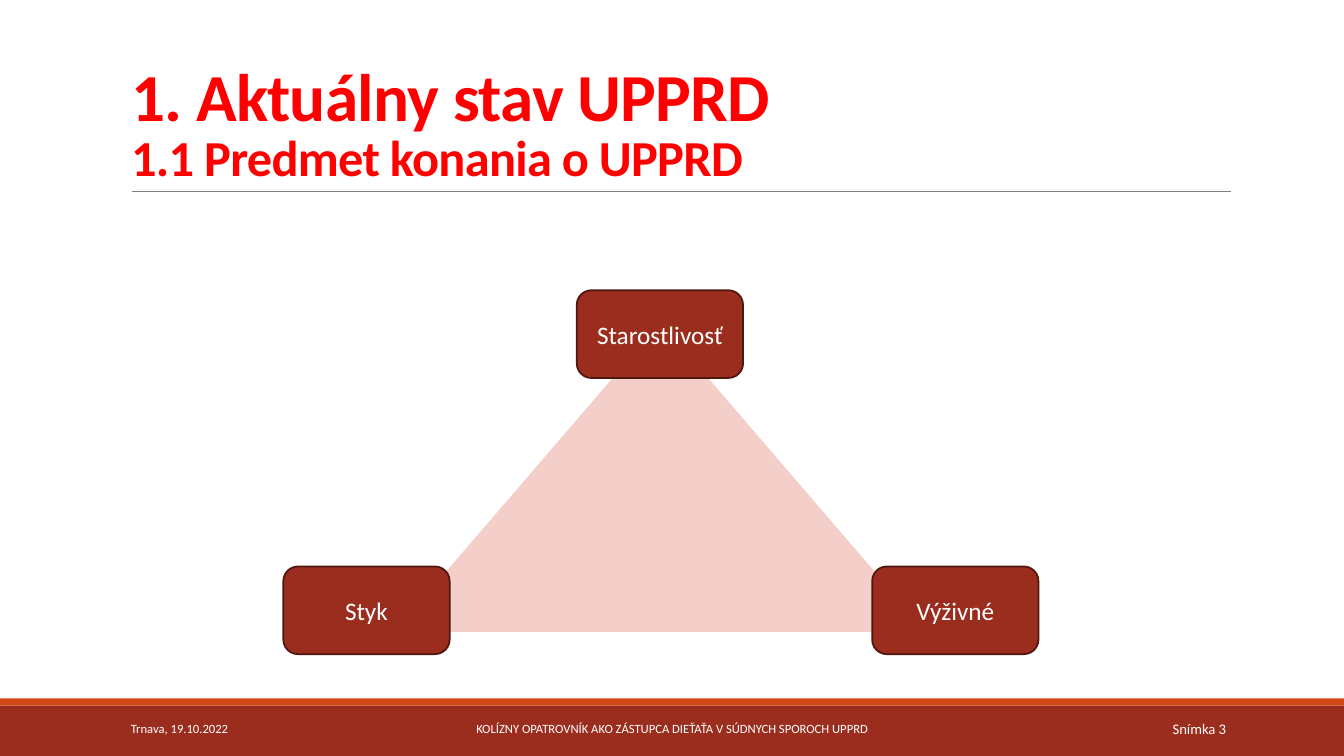
from lxml.etree import SubElement
from pptx import Presentation
from pptx.dml.color import RGBColor
from pptx.enum.shapes import MSO_CONNECTOR, MSO_SHAPE
from pptx.enum.text import MSO_ANCHOR, MSO_AUTO_SIZE, PP_ALIGN
from pptx.oxml.ns import qn
from pptx.util import Pt

PX = 9144  # EMU per px, at 100 px to the inch
WIDTH, HEIGHT = 1333, 750
FONT = "Calibri"
WHITE = RGBColor(0xFF, 0xFF, 0xFF)
RED = RGBColor(0xFF, 0x00, 0x00)
BRICK = RGBColor(0x9B, 0x2D, 0x1F)
DARK_BRICK = RGBColor(0x4E, 0x17, 0x10)
ORANGE = RGBColor(0xD3, 0x48, 0x17)
PINK = RGBColor(0xF4, 0xCE, 0xC9)
GRAY = RGBColor(0x80, 0x80, 0x80)


def px(*lengths):
    return [length * PX for length in lengths]


def add_run(paragraph, text, size, color, bold=False):
    run = paragraph.add_run()
    run.text = text
    run.font.name = FONT
    run.font.size = Pt(size)
    run.font.bold = bold
    run.font.color.rgb = color
    return run


def add_filled_shape(slide, kind, box, fill, outline=None):
    shape = slide.shapes.add_shape(kind, *px(*box))
    shape.shadow.inherit = False
    shape.fill.solid()
    shape.fill.fore_color.rgb = fill
    if outline is None:
        shape.line.fill.background()
    else:
        shape.line.color.rgb = outline
        shape.line.width = Pt(1.25)
    return shape


def write_line(shape, text, size, align):
    frame = shape.text_frame
    frame.word_wrap = True
    frame.vertical_anchor = MSO_ANCHOR.MIDDLE
    paragraph = frame.paragraphs[0]
    paragraph.alignment = align
    add_run(paragraph, text, size, WHITE)


def build_title(slide, box):
    left, top, width, height = box
    # Rule under the title
    bottom = top + height
    rule = slide.shapes.add_connector(
        MSO_CONNECTOR.STRAIGHT, *px(left + 11, bottom, left + 1101, bottom))
    rule.line.color.rgb = GRAY
    rule.line.width = Pt(0.5)
    SubElement(rule._element.spPr, qn("a:effectLst"))

    # Two-line heading
    title = slide.shapes.title
    title.left, title.top, title.width, title.height = px(*box)
    frame = title.text_frame
    frame.word_wrap = True
    frame.auto_size = MSO_AUTO_SIZE.NONE
    frame.vertical_anchor = MSO_ANCHOR.BOTTOM
    paragraph = frame.paragraphs[0]
    paragraph.alignment = PP_ALIGN.LEFT
    paragraph.line_spacing = 0.85
    heading = add_run(paragraph, "1. Aktuálny stav UPPRD", 48, RED, True)
    paragraph.add_line_break()
    subheading = add_run(paragraph, "1.1 Predmet konania o UPPRD", 36, RED, True)
    for run in (heading, subheading):
        run.font._element.set("spc", "-50")


def build_triangle(slide, box):
    left, top, width, height = box
    add_filled_shape(slide, MSO_SHAPE.ISOSCELES_TRIANGLE,
                     (left + 110, top + 32, 528, 307), PINK)
    # Topic at each corner
    topic_width, topic_height = 165, 87
    base = top + height - topic_height
    topics = (
        ("Styk", left, base),
        ("Výživné", left + width - topic_width, base),
        ("Starostlivosť", left + 291, top),
    )
    for text, x, y in topics:
        topic = add_filled_shape(slide, MSO_SHAPE.ROUNDED_RECTANGLE,
                                 (x, y, topic_width, topic_height), BRICK, DARK_BRICK)
        write_line(topic, text, 18, PP_ALIGN.CENTER)


def build_footer(slide, box):
    left, top, width, height = box
    stripe = 7
    add_filled_shape(slide, MSO_SHAPE.RECTANGLE,
                     (left, top + stripe, width, height - stripe), BRICK)
    add_filled_shape(slide, MSO_SHAPE.RECTANGLE, (left, top, width, stripe), ORANGE)
    # Date, talk and slide number
    entries = (
        ("Trnava, 19.10.2022", 120, 270, 9, PP_ALIGN.LEFT),
        ("KOLÍZNY OPATROVNÍK AKO ZÁSTUPCA DIEŤAŤA V SÚDNYCH SPOROCH UPPRD",
         403, 527, 9, PP_ALIGN.CENTER),
        ("Snímka 3", 1083, 143, 10.5, PP_ALIGN.RIGHT),
    )
    for text, x, entry_width, size, align in entries:
        entry = slide.shapes.add_textbox(*px(left + x, top + 10, entry_width, 40))
        write_line(entry, text, size, align)


def main():
    presentation = Presentation()
    presentation.slide_width, presentation.slide_height = px(WIDTH, HEIGHT)
    slide = presentation.slides.add_slide(presentation.slide_layouts[5])
    build_footer(slide, (0, 693, WIDTH, 57))
    build_title(slide, (120, 31, 1100, 159))
    build_triangle(slide, (281, 288, 749, 361))
    presentation.save("out.pptx")


if __name__ == "__main__":
    main()
